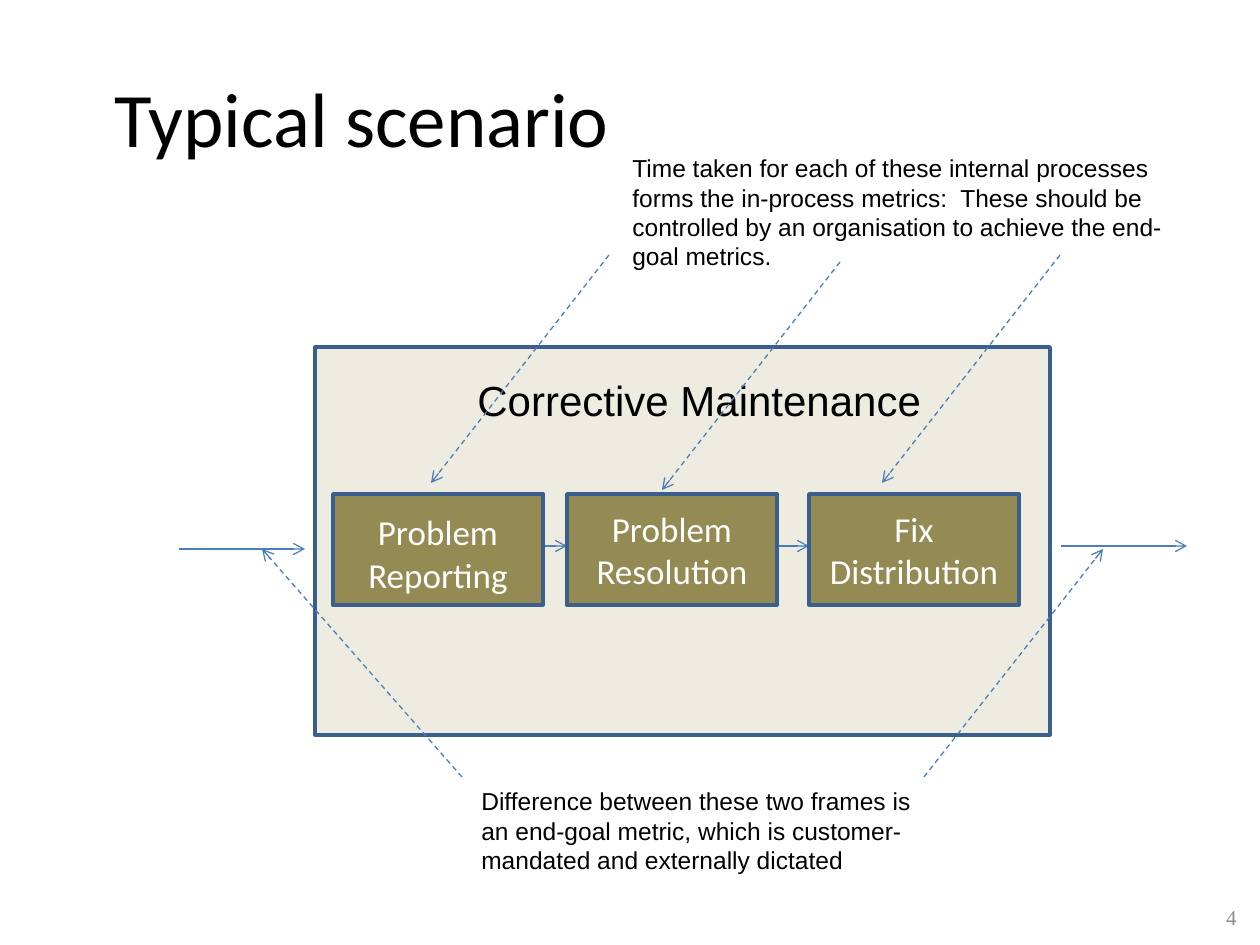
"""Build the corrective maintenance scenario slide."""
from dataclasses import dataclass

from pptx import Presentation
from pptx.dml.color import RGBColor
from pptx.enum.dml import MSO_LINE
from pptx.enum.shapes import MSO_CONNECTOR, MSO_SHAPE
from pptx.enum.text import MSO_ANCHOR as Anchor, MSO_AUTO_SIZE as AutoSize, PP_ALIGN as Align
from pptx.oxml.ns import qn
from pptx.slide import Slide
from pptx.util import Pt
from lxml.etree import SubElement

COLORS = {
    "text": "000000", "light": "FFFFFF", "number": "8C8C8C", "frame": "EEECE1",
    "step": "948A54", "outline": "3A5F8C", "arrow": "4B7EBC",
}


def px(*lengths):
    return [round(length * 914400 / 126) for length in lengths]


def color(name):
    return RGBColor.from_string(COLORS[name])


@dataclass
class SlideBuilder:
    slide: Slide
    heading_font: str = "Calibri"
    body_font: str = "Arial"

    def add_runs(self, frame, runs, font, ink="text", align=Align.LEFT, anchor=Anchor.TOP):
        frame.vertical_anchor = anchor
        paragraph = frame.paragraphs[0]
        paragraph.alignment = align
        for text, size in runs:
            run = paragraph.add_run()
            run.text = text
            run.font.name = font
            run.font.size = Pt(size)
            run.font.color.rgb = color(ink)

    def title(self, text, box):
        shape = self.slide.shapes.title
        shape.left, shape.top, shape.width, shape.height = px(*box)
        shape.text_frame.word_wrap = True
        self.add_runs(shape.text_frame, [(text, 44)], self.heading_font,
                      align=Align.CENTER, anchor=Anchor.MIDDLE)

    def text(self, text, size, box, wrap=True):
        frame = self.slide.shapes.add_textbox(*px(*box)).text_frame
        frame.word_wrap = wrap
        frame.auto_size = AutoSize.SHAPE_TO_FIT_TEXT
        self.add_runs(frame, [(text, size)], self.body_font)

    def number(self, text, box):
        frame = self.slide.shapes.add_textbox(*px(*box)).text_frame
        frame.word_wrap = True
        self.add_runs(frame, [(text, 12)], "Times New Roman", "number",
                      Align.RIGHT, Anchor.MIDDLE)

    def box(self, fill, box, runs=()):
        shape = self.slide.shapes.add_shape(MSO_SHAPE.RECTANGLE, *px(*box))
        shape.shadow.inherit = False
        shape.fill.solid()
        shape.fill.fore_color.rgb = color(fill)
        shape.line.color.rgb = color("outline")
        shape.line.width = Pt(2)
        self.add_runs(shape.text_frame, runs, self.heading_font, "light",
                      Align.CENTER, Anchor.MIDDLE)

    def arrow(self, start, end, dashed=False):
        connector = self.slide.shapes.add_connector(
            MSO_CONNECTOR.STRAIGHT, *px(*start, *end))
        line = connector.line
        line.color.rgb = color("arrow")
        line.width = Pt(0.75)
        if dashed:
            line.dash_style = MSO_LINE.DASH
        properties = connector.element.spPr
        SubElement(properties.find(qn("a:ln")), qn("a:tailEnd"), type="arrow")
        SubElement(properties, qn("a:effectLst"))


def main():
    presentation = Presentation()
    presentation.slide_width, presentation.slide_height = px(1260, 945)
    builder = SlideBuilder(presentation.slides.add_slide(presentation.slide_layouts[5]))

    builder.number("4", (955, 892, 294, 50))
    builder.title("Typical scenario", (63, 38, 598, 158))
    builder.box("frame", (315, 347, 735, 388))
    builder.text("Corrective Maintenance", 24, (465, 368, 474, 63), wrap=False)

    for left, right, top in ((179, 305, 549), (1061, 1187, 546),
                             (441, 567, 546), (683, 809, 546)):
        builder.arrow((left, top), (right, top))

    steps = (
        (333, [("Problem", 20), (" ", 24), ("Reporting", 20)]),
        (567, [("Problem Resolution", 20)]),
        (809, [("Fix Distribution", 20)]),
    )
    for left, runs in steps:
        builder.box("step", (left, 494, 210, 111), runs)

    for left, top in ((431, 483), (662, 490), (882, 483)):
        builder.arrow((left + 178, top - 228), (left, top), dashed=True)
    for start, end in ((462, 262), (924, 1103)):
        builder.arrow((start, 777), (end, 549), dashed=True)

    builder.text("Difference between these two frames is an end-goal metric, which is "
                 "customer-mandated and externally dictated", 14, (469, 780, 476, 102))
    builder.text("Time taken for each of these internal processes forms the in-process "
                 "metrics:  These should be controlled by an organisation to achieve the "
                 "end-goal metrics.", 14, (620, 147, 567, 131))
    presentation.save("out.pptx")


if __name__ == "__main__":
    main()
